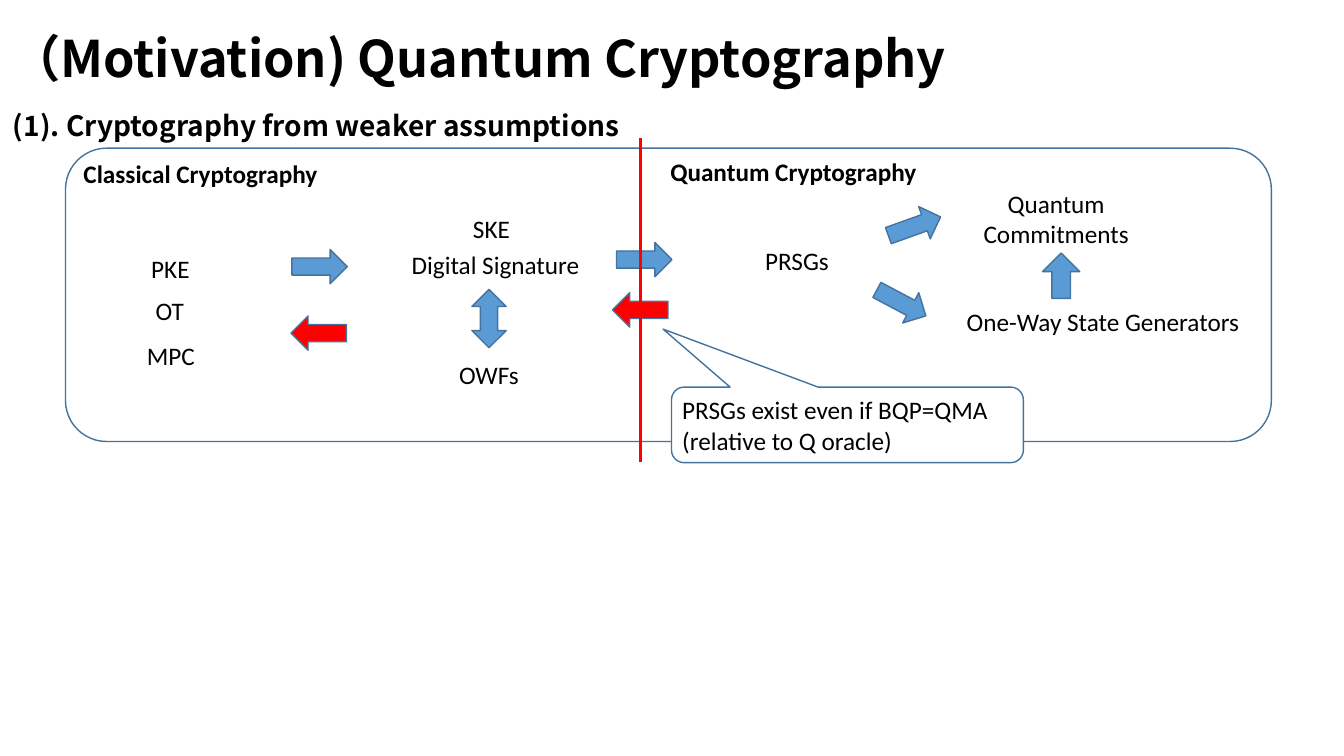
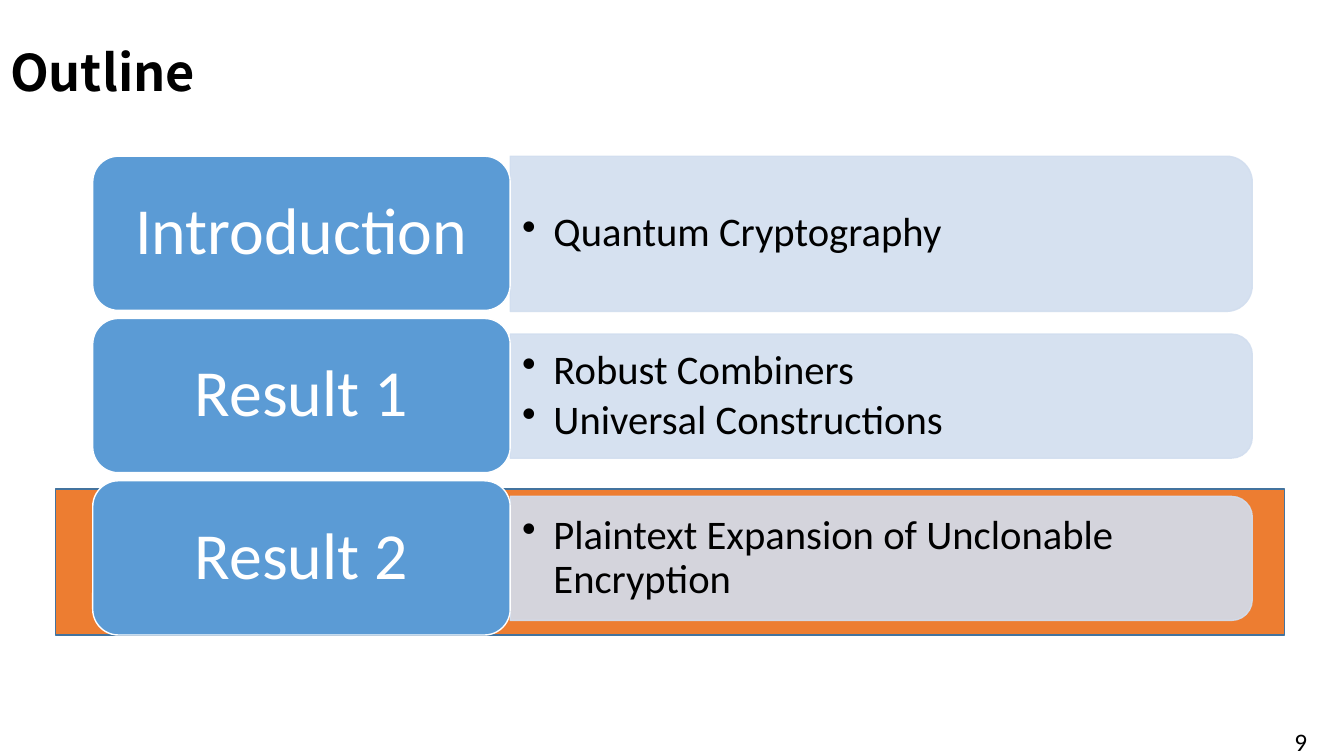
import pptx
import pptx.util
import pptx.dml.color
import pptx.enum.shapes
import pptx.enum.text
from lxml import etree
from pptx.oxml.ns import qn

Inches = pptx.util.Inches
Pt = pptx.util.Pt
RGBColor = pptx.dml.color.RGBColor
KIND = pptx.enum.shapes.MSO_SHAPE
ALIGN = pptx.enum.text.PP_ALIGN
ANCHOR = pptx.enum.text.MSO_ANCHOR
FIT = pptx.enum.text.MSO_AUTO_SIZE

BLACK = RGBColor(0, 0, 0)
WHITE = RGBColor(255, 255, 255)
RED = RGBColor(255, 0, 0)
BLUE = RGBColor(0x5B, 0x9B, 0xD5)
EDGE = RGBColor(0x43, 0x73, 0x9E)
PALE = RGBColor(0xD2, 0xDE, 0xEF)
ORANGE = RGBColor(0xED, 0x7D, 0x31)
BODY = "Calibri"
HEAD = "Noto Sans CJK JP"


def write(box, lines, size=18, font=BODY, color=BLACK, bold=False,
          align=ALIGN.LEFT, anchor=ANCHOR.TOP, pace=None, after=None, bullet=False):
    frame = box.text_frame
    frame.word_wrap = True
    frame.auto_size = FIT.NONE
    frame.vertical_anchor = anchor
    for i, line in enumerate(lines):
        para = frame.paragraphs[0] if i == 0 else frame.add_paragraph()
        para.alignment = align
        para.line_spacing = pace
        para.space_after = after
        if bullet:
            props = para._p.get_or_add_pPr()
            props.set("marL", str(Inches(0.31)))
            props.set("indent", str(Inches(-0.31)))
            etree.SubElement(props, qn("a:buChar")).set("char", "•")
        run = para.add_run()
        run.text = line
        run.font.size = Pt(size)
        run.font.bold = bold
        run.font.color.rgb = color
        run.font.name = font
        etree.SubElement(run._r.get_or_add_rPr(), qn("a:ea")).set("typeface", font)


def draw(slide, kind, place, fill, edge=EDGE, turn=0):
    shape = slide.shapes.add_shape(kind, *map(Inches, place))
    shape.shadow.inherit = False
    shape.fill.solid()
    shape.fill.fore_color.rgb = fill
    shape.line.color.rgb = edge
    shape.line.width = Pt(1)
    shape.rotation = turn
    return shape


deck = pptx.Presentation()
deck.slide_width = Inches(13.33)
deck.slide_height = Inches(7.5)

slides = []
for text, place in [
    ("（Motivation) Quantum Cryptography", (0, 0, 13.33, 1.21)),
    ("Outline", (0, 0.02, 12.41, 1.45)),
]:
    slide = deck.slides.add_slide(deck.slide_layouts[5])
    title = slide.shapes.title
    title.left, title.top, title.width, title.height = map(Inches, place)
    write(title, [text], 36, HEAD, bold=True, anchor=ANCHOR.MIDDLE, pace=0.9)
    slides.append(slide)
crypto, outline = slides

frame = draw(crypto, KIND.ROUNDED_RECTANGLE, (0.65, 1.47, 11.96, 2.91), WHITE)
frame.adjustments[0] = 0.14

callout = draw(crypto, KIND.ROUNDED_RECTANGULAR_CALLOUT, (6.66, 3.84, 3.49, 0.75), WHITE)
for i, value in enumerate((-0.524, -1.267, 0.167)):
    callout.adjustments[i] = value
callout.text_frame.margin_left = Inches(0.07)
write(callout, ["PRSGs exist even if BQP=QMA", "(relative to Q oracle)"], anchor=ANCHOR.MIDDLE)

for text, place, size, font in [
    ("(1). Cryptography from weaker assumptions", (0.03, 1.03, 7.79, 0.44), 20, HEAD),
    ("Classical Cryptography", (0.73, 1.52, 2.56, 0.4), 18, BODY),
    ("Quantum Cryptography", (6.55, 1.5, 2.97, 0.4), 18, BODY),
]:
    box = crypto.shapes.add_textbox(*map(Inches, place))
    write(box, [text], size, font, bold=True)

for text, place, align in [
    ("PKE", (1.38, 2.46, 0.62, 0.4), ALIGN.CENTER),
    ("OT", (1.18, 2.88, 1.01, 0.4), ALIGN.CENTER),
    ("MPC", (1.19, 3.33, 1.01, 0.4), ALIGN.CENTER),
    ("SKE", (3.86, 2.07, 2.03, 0.4), ALIGN.CENTER),
    ("Digital Signature", (3.9, 2.42, 2.03, 0.4), ALIGN.CENTER),
    ("OWFs", (4.3, 3.52, 1.1, 0.4), ALIGN.CENTER),
    ("PRSGs", (7.49, 2.38, 1.01, 0.4), ALIGN.LEFT),
    ("Quantum Commitments", (9.65, 1.82, 1.65, 0.71), ALIGN.CENTER),
    ("One-Way State Generators", (9.46, 2.99, 2.96, 0.4), ALIGN.CENTER),
]:
    box = crypto.shapes.add_textbox(*map(Inches, place))
    write(box, [text], align=align)

for left, top, turn, fill in [
    (3, 2.37, 270, BLUE),
    (2.99, 3.03, 90, RED),
    (6.22, 2.3, 270, BLUE),
    (6.18, 2.8, 90, RED),
    (8.9, 1.97, 250.3, BLUE),
    (8.77, 2.73, 298, BLUE),
]:
    draw(crypto, KIND.DOWN_ARROW, (left, top, 0.34, 0.55), fill, turn=turn)
draw(crypto, KIND.DOWN_ARROW, (10.34, 2.51, 0.37, 0.45), BLUE, turn=180)
draw(crypto, KIND.LEFT_RIGHT_ARROW, (4.56, 2.99, 0.58, 0.34), BLUE, turn=90)

border = crypto.shapes.add_connector(
    pptx.enum.shapes.MSO_CONNECTOR.STRAIGHT,
    Inches(6.35), Inches(1.37), Inches(6.35), Inches(4.58))
border.line.color.rgb = RED
border.line.width = Pt(2.25)
etree.SubElement(border._element.spPr, qn("a:effectLst"))

page = outline.shapes.add_textbox(Inches(12.74), Inches(7.16), Inches(0.38), Inches(0.31))
write(page, ["9"])

draw(outline, KIND.RECTANGLE, (0.55, 4.85, 12.19, 1.45), ORANGE)

for i, (name, points, depth) in enumerate([
    ("Introduction", ["Quantum Cryptography"], 1.54),
    ("Result 1", ["Robust Combiners", "Universal Constructions"], 1.23),
    ("Result 2", ["Plaintext Expansion of Unclonable Encryption"], 1.23),
]):
    top = 1.55 + 1.61 * i
    mid = top + 0.77
    wide = 7.36
    place = (5.06 + (wide - depth) / 2, mid - wide / 2, depth, wide)
    panel = draw(outline, KIND.ROUND_2_SAME_RECTANGLE, place, PALE, PALE, 90)
    for tint in panel._element.spPr.iter(qn("a:srgbClr")):
        etree.SubElement(tint, qn("a:alpha")).set("val", "90000")

    box = outline.shapes.add_textbox(Inches(5.06), Inches(mid - 0.6), Inches(7.3), Inches(1.2))
    inner = box.text_frame
    inner.margin_left = inner.margin_right = Inches(0.12)
    inner.margin_top = inner.margin_bottom = Inches(0.06)
    write(box, points, 29, anchor=ANCHOR.MIDDLE, pace=0.9, after=Pt(4.4), bullet=True)

    card = draw(outline, KIND.ROUNDED_RECTANGLE, (0.92, top, 4.14, 1.53), BLUE, WHITE)
    write(card, [name], 47, color=WHITE, align=ALIGN.CENTER, anchor=ANCHOR.MIDDLE, pace=0.9)

deck.save("out.pptx")
